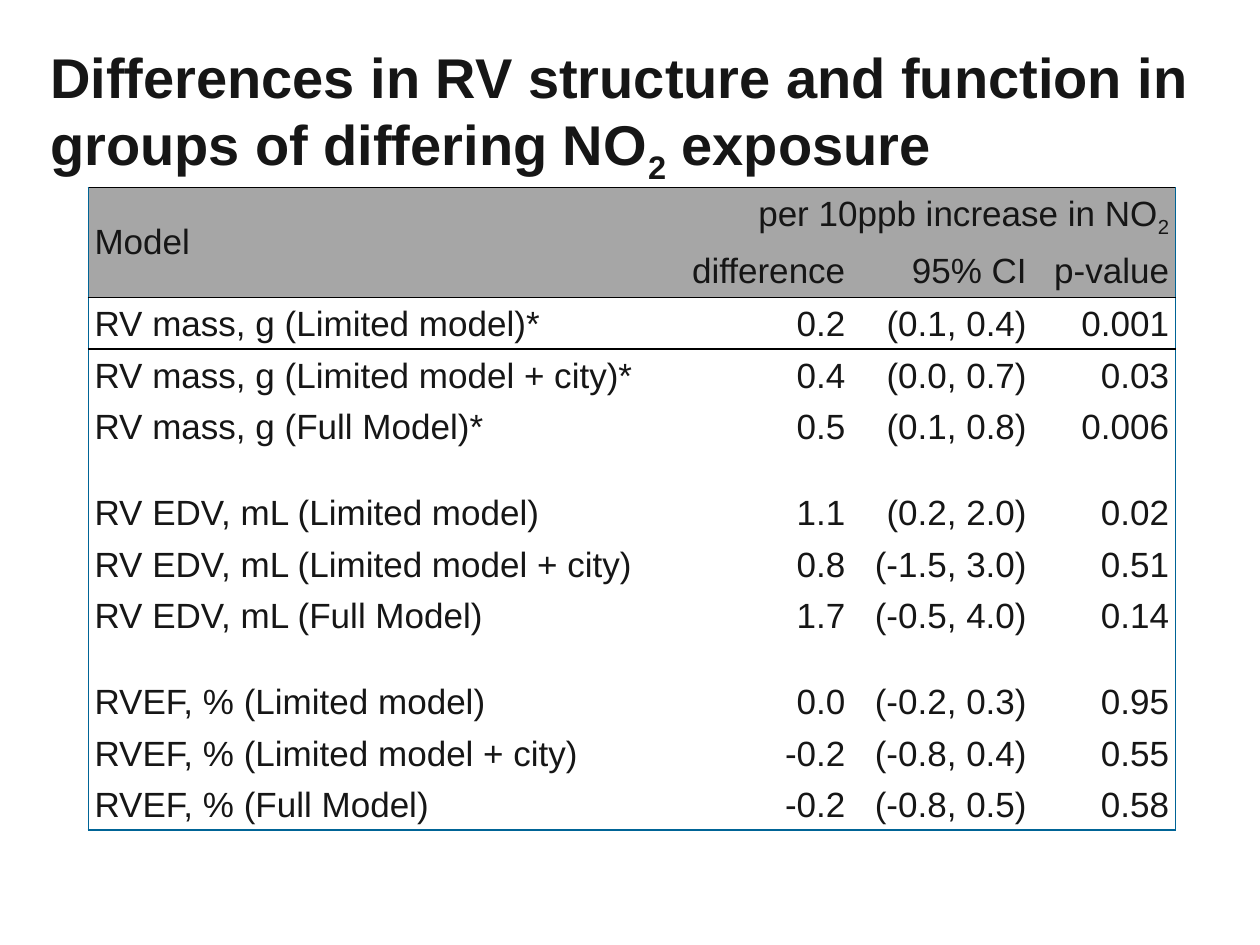
import pptx
import pptx.dml.color
import pptx.enum.text
import pptx.oxml.ns
import pptx.util
from lxml import etree

Inches = pptx.util.Inches
Pt = pptx.util.Pt
RGBColor = pptx.dml.color.RGBColor
Align = pptx.enum.text.PP_ALIGN
Anchor = pptx.enum.text.MSO_ANCHOR
qn = pptx.oxml.ns.qn

INK = RGBColor(0x16, 0x16, 0x16)
BLACK = RGBColor(0, 0, 0)
BLUE = RGBColor(0x00, 0x64, 0x96)
GREY = RGBColor(0xA6, 0xA6, 0xA6)
WHITE = RGBColor(0xFF, 0xFF, 0xFF)

TITLE = [
    ("Differences in RV structure and function in groups of differing NO", False),
    ("2", True),
    (" exposure", False),
]
INCREASE = [("per 10ppb increase in NO", False), ("2", True)]
HEADINGS = ["", "difference", "95% CI", "p-value"]
BLANK = [""] * 4
RESULTS = [
    ["RV mass, g (Limited model)*", "0.2", "(0.1, 0.4)", "0.001"],
    ["RV mass, g (Limited model + city)*", "0.4", "(0.0, 0.7)", "0.03"],
    ["RV mass, g (Full Model)*", "0.5", "(0.1, 0.8)", "0.006"],
    BLANK,
    ["RV EDV, mL (Limited model)", "1.1", "(0.2, 2.0)", "0.02"],
    ["RV EDV, mL (Limited model + city)", "0.8", "(-1.5, 3.0)", "0.51"],
    ["RV EDV, mL (Full Model)", "1.7", "(-0.5, 4.0)", "0.14"],
    BLANK,
    ["RVEF, % (Limited model)", "0.0", "(-0.2, 0.3)", "0.95"],
    ["RVEF, % (Limited model + city)", "-0.2", "(-0.8, 0.4)", "0.55"],
    ["RVEF, % (Full Model)", "-0.2", "(-0.8, 0.5)", "0.58"],
]
ROWS = [["Model", INCREASE, "", ""], HEADINGS] + RESULTS
COLUMN_WIDTHS = [4.57, 1.49, 1.44, 1.13]
HEADER_ROWS = 2
RULES = {0: BLACK, 2: BLACK, 3: BLACK, len(ROWS): BLUE}


class SlideBuilder:
    font_name = "Arial"
    rule_width = Pt(0.75)

    def __init__(self, deck):
        self.page = deck.slides.add_slide(deck.slide_layouts[6])

    def add_text(self, para, content, size, bold=False):
        spans = [(content, False)] if isinstance(content, str) else content
        for text, subscript in spans:
            if text:
                span = para.add_run()
                span.text = text
                if subscript:
                    span.font._element.set("baseline", "-25000")
        font = para.font
        font.name, font.size, font.bold = self.font_name, Pt(size), bold
        font.color.rgb = INK

    def title(self, content, left, top, width, height):
        box = self.page.shapes.add_textbox(
            Inches(left), Inches(top), Inches(width), Inches(height))
        box.text_frame.word_wrap = True
        self.add_text(box.text_frame.paragraphs[0], content, 32, True)

    def borders(self, cell, colours):
        properties = cell._tc.get_or_add_tcPr()
        for position, (side, colour) in enumerate(zip("LRTB", colours)):
            line = etree.Element(qn(f"a:ln{side}"), w=str(self.rule_width))
            if colour is None:
                etree.SubElement(line, qn("a:noFill"))
            else:
                fill = etree.SubElement(line, qn("a:solidFill"))
                etree.SubElement(fill, qn("a:srgbClr"), val=str(colour))
            properties.insert(position, line)

    def cell(self, cell, content, size, header, first):
        cell.margin_left = cell.margin_right = Inches(0.05)
        cell.margin_top = cell.margin_bottom = Inches(0.04 if size == 20 else 0)
        cell.vertical_anchor = Anchor.MIDDLE if header else Anchor.BOTTOM
        cell.fill.solid()
        cell.fill.fore_color.rgb = GREY if header else WHITE
        para = cell.text_frame.paragraphs[0]
        para.alignment = Align.LEFT if first else Align.RIGHT
        self.add_text(para, content, size)

    def table(self, rows, left, top):
        heights = [0.27 if row is BLANK else 0.41 for row in rows]
        heights[0] = 0.46
        table = self.page.shapes.add_table(
            len(rows), len(COLUMN_WIDTHS), Inches(left), Inches(top),
            Inches(sum(COLUMN_WIDTHS)), Inches(sum(heights))).table
        for column, width in zip(table.columns, COLUMN_WIDTHS):
            column.width = Inches(width)
        last = len(COLUMN_WIDTHS) - 1
        for r, row in enumerate(rows):
            table.rows[r].height = Inches(heights[r])
            for c, content in enumerate(row):
                cell = table.cell(r, c)
                size = 10 if row is BLANK else 20
                self.cell(cell, content, size, r < HEADER_ROWS, c == 0)
                bottom = HEADER_ROWS if (r, c) == (0, 0) else r + 1
                self.borders(cell, [
                    BLUE if c == 0 else None,
                    BLUE if c == last or (r, c) == (0, 1) else None,
                    RULES.get(r), RULES.get(bottom)])
        table.cell(0, 0).merge(table.cell(1, 0))
        table.cell(0, 1).merge(table.cell(0, last))


def main():
    deck = pptx.Presentation()
    deck.slide_width, deck.slide_height = Inches(10), Inches(7.5)
    builder = SlideBuilder(deck)
    builder.table(ROWS, 0.7, 1.49)
    builder.title(TITLE, 0.3, 0.29, 9.7, 1.08)
    deck.save("out.pptx")


if __name__ == "__main__":
    main()
